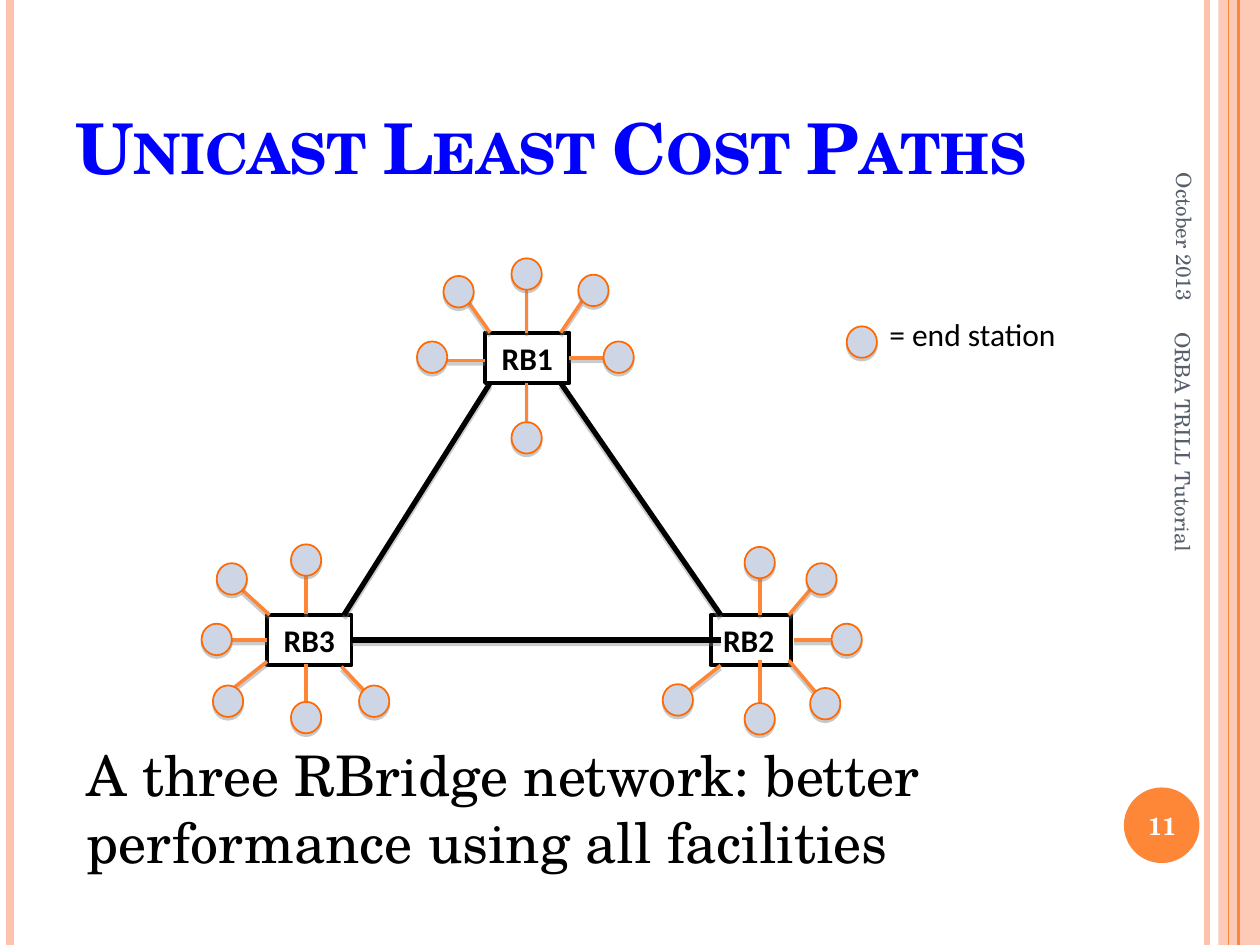
import pptx
import pptx.dml.color
import pptx.enum.shapes
import pptx.enum.text
import pptx.oxml
import pptx.util
from dataclasses import dataclass
from lxml import etree

Inches = pptx.util.Inches
Pt = pptx.util.Pt
RGB = pptx.dml.color.RGBColor.from_string
MSO_SHAPE = pptx.enum.shapes.MSO_SHAPE
ANCHOR = pptx.enum.text.MSO_ANCHOR
ALIGN = pptx.enum.text.PP_ALIGN
STRAIGHT = pptx.enum.shapes.MSO_CONNECTOR.STRAIGHT
A = "http://schemas.openxmlformats.org/drawingml/2006/main"


@dataclass(frozen=True)
class Theme:
    serif: str = "TeX Gyre Schola"
    sans: str = "Calibri"
    orange: str = "FE8637"
    peach: str = "FEC3AE"
    station_fill: str = "CED6E6"
    station_line: str = "FF6903"
    blue: str = "0000FF"
    slate: str = "575F6D"
    black: str = "000000"
    white: str = "FFFFFF"
    title: int = 40
    caption: int = 32
    label: int = 18
    number: int = 14
    footer: int = 12


theme = Theme()


def write_text(shape, text, size, color, font=theme.serif, bold=False,
               align=ALIGN.LEFT, anchor=ANCHOR.TOP, small_caps=False):
    frame = shape.text_frame
    frame.word_wrap = True
    frame.auto_size = pptx.enum.text.MSO_AUTO_SIZE.NONE
    frame.vertical_anchor = anchor
    paragraph = frame.paragraphs[0]
    paragraph.alignment = align
    run = paragraph.add_run()
    run.text = text
    run.font.name = font
    run.font.size = Pt(size)
    run.font.bold = bold
    run.font.color.rgb = RGB(color)
    if small_caps:
        run.font._element.set("cap", "small")


def set_shadow(shape, distance=0, opacity=40):
    """Give the shape a grey shadow straight below it, or none at distance 0."""
    effects = etree.SubElement(shape._element.spPr, f"{{{A}}}effectLst")
    if distance:
        effects.append(pptx.oxml.parse_xml(
            f'<a:outerShdw xmlns:a="{A}" blurRad="0" dist="{Pt(distance)}" dir="5400000" '
            f'rotWithShape="0"><a:srgbClr val="808080"><a:alpha val="{opacity * 1000}"/>'
            "</a:srgbClr></a:outerShdw>"))


presentation = pptx.Presentation()
presentation.slide_width = Inches(10)
presentation.slide_height = Inches(7.5)
slide = presentation.slides.add_slide(presentation.slide_layouts[5])
shapes = slide.shapes

# Side stripes and page number disc
stripe = shapes.add_shape(MSO_SHAPE.RECTANGLE, Inches(9.67), 0, Inches(0.33), Inches(7.5))
stripe.shadow.inherit = False
stripe.fill.solid()
stripe.fill.fore_color.rgb = RGB(theme.peach)
stripe.line.fill.background()
stripe_color = stripe._element.spPr.find(f".//{{{A}}}srgbClr")
etree.SubElement(stripe_color, f"{{{A}}}alpha", val="87000")

for x, color, width in [(9.58, theme.peach, 3), (0.08, theme.peach, 4.5),
                        (9.83, theme.orange, 1.5), (9.75, theme.orange, 0.75)]:
    rule = shapes.add_connector(STRAIGHT, Inches(x), 0, Inches(x), Inches(7.5))
    rule.line.color.rgb = RGB(color)
    rule.line.width = Pt(width)
    set_shadow(rule)

disc = shapes.add_shape(MSO_SHAPE.OVAL, Inches(8.92), Inches(6.25), Inches(0.6), Inches(0.6))
disc.shadow.inherit = False
disc.fill.solid()
disc.fill.fore_color.rgb = RGB(theme.orange)
disc.line.fill.background()

# Title
title = shapes.title
title.left, title.top = Inches(0.5), Inches(0.3)
title.width, title.height = Inches(8.17), Inches(1.25)
write_text(title, "Unicast Least Cost Paths", theme.title, theme.blue, bold=True,
           anchor=ANCHOR.BOTTOM, small_caps=True)

# Links: two ends, colour, width
trunks = [(2.73, 4.88, 3.89, 3.04), (5.72, 4.88, 4.45, 3.04), (5.72, 5.08, 2.79, 5.08)]

# Bridges: name, box, alignment, then each station's left and top with its link
bridges = [
    ("RB1", (3.85, 2.64, 0.67, 0.4), ALIGN.CENTER, [
        (4.06, 2.05, (4.18, 2.64, 4.18, 2.3)),
        (4.59, 2.18, (4.45, 2.64, 4.62, 2.39)),
        (4.79, 2.71, (4.52, 2.84, 4.83, 2.84)),
        (4.06, 3.35, (4.18, 3.04, 4.18, 3.34)),
        (3.31, 2.71, (3.85, 2.86, 3.55, 2.86)),
        (3.52, 2.19, (3.89, 2.64, 3.72, 2.4))]),
    ("RB2", (5.64, 4.88, 0.64, 0.4), ALIGN.LEFT, [
        (5.91, 4.34, (6.03, 4.88, 6.03, 4.58)),
        (6.4, 4.47, (6.26, 4.88, 6.43, 4.68)),
        (6.6, 4.95, (6.3, 5.08, 6.64, 5.08)),
        (6.43, 5.46, (6.26, 5.24, 6.47, 5.49)),
        (5.91, 5.58, (6.03, 5.24, 6.03, 5.58)),
        (5.26, 5.43, (5.72, 5.28, 5.38, 5.55))]),
    ("RB3", (2.12, 4.88, 0.67, 0.4), ALIGN.CENTER, [
        (2.31, 4.32, (2.43, 4.87, 2.43, 4.57)),
        (2.85, 5.44, (2.71, 5.29, 2.89, 5.48)),
        (2.31, 5.57, (2.43, 5.27, 2.43, 5.56)),
        (1.69, 5.44, (2.12, 5.25, 1.79, 5.51)),
        (1.6, 4.95, (2.12, 5.08, 1.84, 5.08)),
        (1.72, 4.47, (2.14, 4.88, 1.92, 4.68))]),
]

for name, box, align, _ in bridges:
    bridge = shapes.add_shape(MSO_SHAPE.RECTANGLE, *map(Inches, box))
    bridge.shadow.inherit = False
    bridge.fill.solid()
    bridge.fill.fore_color.rgb = RGB(theme.white)
    bridge.line.color.rgb = RGB(theme.black)
    bridge.line.width = Pt(2.25)
    write_text(bridge, name, theme.label, theme.black, font=theme.sans, bold=True, align=align)

stations = [station for *_, around in bridges for station in around]
links = [(ends, theme.black, 3) for ends in trunks]
links += [(ends, theme.orange, 2) for _, _, ends in stations]
for ends, color, width in links:
    link = shapes.add_connector(STRAIGHT, *map(Inches, ends))
    link.line.color.rgb = RGB(color)
    link.line.width = Pt(width)
    set_shadow(link, distance=2)

legend_spot = (6.72, 2.59)
for left, top in [station[:2] for station in stations] + [legend_spot]:
    station = shapes.add_shape(MSO_SHAPE.OVAL, Inches(left), Inches(top),
                               Inches(0.24), Inches(0.25))
    station.fill.solid()
    station.fill.fore_color.rgb = RGB(theme.station_fill)
    station.line.color.rgb = RGB(theme.station_line)
    station.line.width = Pt(1)
    set_shadow(station, distance=1.6, opacity=42)

# Legend, caption, page number and sideways footers
footer = dict(size=theme.footer, color=theme.slate, anchor=ANCHOR.MIDDLE)
texts = [
    ("= end station", (6.96, 2.45, 2.17, 0.4), 0,
     dict(size=theme.label, color=theme.black, font=theme.sans)),
    ("A three RBridge network: better performance using all facilities",
     (0.59, 5.83, 8.79, 1.18), 0, dict(size=theme.caption, color=theme.black)),
    ("11", (8.89, 6.27, 0.67, 0.57), 0,
     dict(size=theme.number, color=theme.white, bold=True,
          align=ALIGN.CENTER, anchor=ANCHOR.MIDDLE)),
    ("October 2013", (8.3, 1.18, 2.2, 0.42), 90, dict(footer, align=ALIGN.RIGHT)),
    ("ORBA TRILL Tutorial", (7.64, 4.09, 3.5, 0.4), 90, footer),
]
for text, box, rotation, text_format in texts:
    text_box = shapes.add_textbox(*map(Inches, box))
    text_box.rotation = rotation
    write_text(text_box, text, **text_format)

presentation.save("out.pptx")
